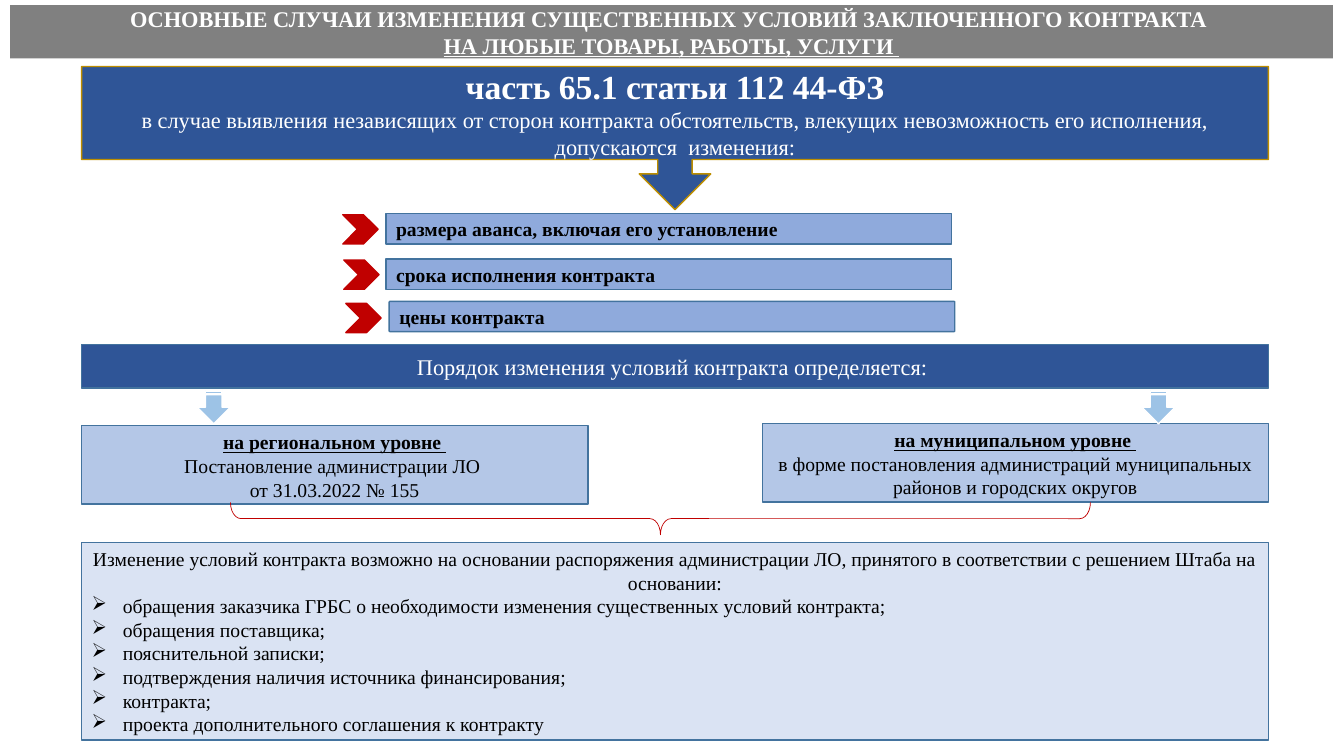
from lxml import etree
from pptx import Presentation
from pptx.dml.color import RGBColor
from pptx.enum.shapes import MSO_SHAPE
from pptx.enum.text import MSO_ANCHOR, PP_ALIGN
from pptx.oxml.ns import qn
from pptx.util import Emu, Pt

PX = 9144  # 100 px to the inch
FONT = "Times New Roman"

WHITE = RGBColor(0xFF, 0xFF, 0xFF)
BLACK = RGBColor(0x00, 0x00, 0x00)
GRAY = RGBColor(0x80, 0x80, 0x80)
RED = RGBColor(0xC0, 0x00, 0x00)
GOLD = RGBColor(0xBD, 0x8E, 0x00)
NAVY = RGBColor(0x2F, 0x55, 0x97)
STEEL = RGBColor(0x43, 0x73, 0x9E)
BLUE = RGBColor(0x8F, 0xAA, 0xDC)
LIGHT_BLUE = RGBColor(0xB4, 0xC7, 0xE7)
PALE_BLUE = RGBColor(0xDA, 0xE3, 0xF3)
SKY = RGBColor(0x9D, 0xC3, 0xE6)

BOX = MSO_SHAPE.ROUNDED_RECTANGLE
CHEVRON = MSO_SHAPE.CHEVRON
CALLOUT = MSO_SHAPE.DOWN_ARROW_CALLOUT
STRIPED_ARROW = MSO_SHAPE.STRIPED_RIGHT_ARROW
BRACE = MSO_SHAPE.RIGHT_BRACE
TOP, MIDDLE = MSO_ANCHOR.TOP, MSO_ANCHOR.MIDDLE
LEFT, CENTER, JUSTIFY = PP_ALIGN.LEFT, PP_ALIGN.CENTER, PP_ALIGN.JUSTIFY

LEFT_EDGE, FULL_WIDTH = 81, 1177

# Chevron left and top, box left and top, corner, wording
CHANGES = [
    (340, 213, 383, 212, 0, "размера аванса, включая его установление"),
    (341, 258, 383, 257, 0, "срока исполнения контракта"),
    (343, 301, 386, 299, 0.03, "цены контракта"),
]
GROUNDS = [
    "обращения заказчика ГРБС о необходимости изменения существенных условий контракта;",
    "обращения поставщика;",
    "пояснительной записки;",
    "подтверждения наличия источника финансирования;",
    "контракта;",
    "проекта дополнительного соглашения к контракту ",
]


def add_figure(slide, kind, bounds, fill, line=None, line_width=1, adjustments=(), rotation=0):
    shape = slide.shapes.add_shape(kind, *(Emu(value * PX) for value in bounds))
    shape.shadow.inherit = False
    shape.rotation = rotation
    for index, value in enumerate(adjustments):
        shape.adjustments[index] = value
    if fill is None:
        shape.fill.background()
    else:
        shape.fill.solid()
        shape.fill.fore_color.rgb = fill
    if line is None:
        shape.line.fill.background()
    else:
        shape.line.color.rgb = line
        shape.line.width = Pt(line_width)
    return shape


def add_box(slide, bounds, fill, line=STEEL, corner=0, anchor=MIDDLE):
    shape = add_figure(slide, BOX, bounds, fill, line, adjustments=[corner])
    shape.text_frame.vertical_anchor = anchor
    return shape


def add_bullet(paragraph, indent):
    properties = paragraph._p.get_or_add_pPr()
    properties.set("marL", str(indent * PX))
    properties.set("indent", str(-indent * PX))
    etree.SubElement(properties, qn("a:buChar")).set("char", "➢")


def write(shape, text, size, color=BLACK, align=CENTER, bold=False, underline=False):
    """Fill the first paragraph of a shape, or append one after it."""
    frame = shape.text_frame
    frame.word_wrap = True
    paragraph = frame.paragraphs[0]
    if paragraph.runs:
        paragraph = frame.add_paragraph()
    paragraph.alignment = align
    run = paragraph.add_run()
    run.text = text
    run.font.name = FONT
    run.font.size = Pt(size)
    run.font.color.rgb = color
    run.font.bold = bold
    run.font.underline = underline
    return paragraph


def add_change(slide, chevron_left, chevron_top, left, top, corner, text):
    add_figure(slide, CHEVRON, (chevron_left, chevron_top, 35, 29), RED, RED)
    box = add_box(slide, (left, top, 561, 30), BLUE, corner=corner)
    write(box, text, 14, align=LEFT, bold=True)


def add_level(slide, left, top, arrow_left, heading, lines):
    box = add_box(slide, (left, top, 502, 78), LIGHT_BLUE, anchor=TOP)
    write(box, heading, 14, bold=True, underline=True)
    for line in lines:
        write(box, line, 14)
    add_figure(slide, STRIPED_ARROW, (arrow_left, 387, 34, 33), SKY, WHITE, rotation=90)


def main():
    presentation = Presentation()
    presentation.slide_width = Emu(1333 * PX)
    presentation.slide_height = Emu(750 * PX)
    slide = presentation.slides.add_slide(presentation.slide_layouts[6])

    # Permitted changes
    for change in CHANGES:
        add_change(slide, *change)

    # Title
    title = add_box(slide, (10, 5, 1312, 53), GRAY, line=None)
    write(title, "ОСНОВНЫЕ СЛУЧАИ ИЗМЕНЕНИЯ СУЩЕСТВЕННЫХ УСЛОВИЙ ЗАКЛЮЧЕННОГО КОНТРАКТА ",
          16, WHITE, bold=True)
    write(title, "НА ЛЮБЫЕ ТОВАРЫ, РАБОТЫ, УСЛУГИ ", 16, WHITE, bold=True, underline=True)

    # Legal basis
    basis = add_figure(slide, CALLOUT, (LEFT_EDGE, 66, FULL_WIDTH, 142), NAVY, GOLD,
                       adjustments=(0.24, 0.25, 0.25, 0.65))
    basis.text_frame.vertical_anchor = MIDDLE
    write(basis, "часть 65.1 статьи 112 44-ФЗ", 24, WHITE, bold=True)
    write(basis, "в случае выявления независящих от сторон контракта обстоятельств, "
                 "влекущих невозможность его исполнения, допускаются  изменения:", 16, WHITE)

    # Procedure and its two levels
    procedure = add_box(slide, (LEFT_EDGE, 342, FULL_WIDTH, 43), NAVY)
    write(procedure, "Порядок изменения условий контракта определяется: ", 16, WHITE)
    add_level(slide, LEFT_EDGE, 422, 195, "на региональном уровне ",
              ["Постановление администрации ЛО ", "от 31.03.2022 № 155"])
    add_level(slide, 756, 420, 1132, "на муниципальном уровне ",
              ["в форме постановления администраций муниципальных районов и городских округов"])

    # Grounds for the change
    grounds = add_box(slide, (LEFT_EDGE, 538, FULL_WIDTH, 196), PALE_BLUE, anchor=TOP)
    write(grounds, "Изменение условий контракта возможно на основании распоряжения администрации ЛО, "
                   "принятого в соответствии с решением Штаба на основании:", 14)
    for ground in GROUNDS:
        add_bullet(write(grounds, ground, 14, align=JUSTIFY), 31)

    # Brace joining both levels
    add_figure(slide, BRACE, (639, 88, 32, 853), None, RED, 0.5, (0.33, 0.5), rotation=90)

    presentation.save("out.pptx")


if __name__ == "__main__":
    main()
